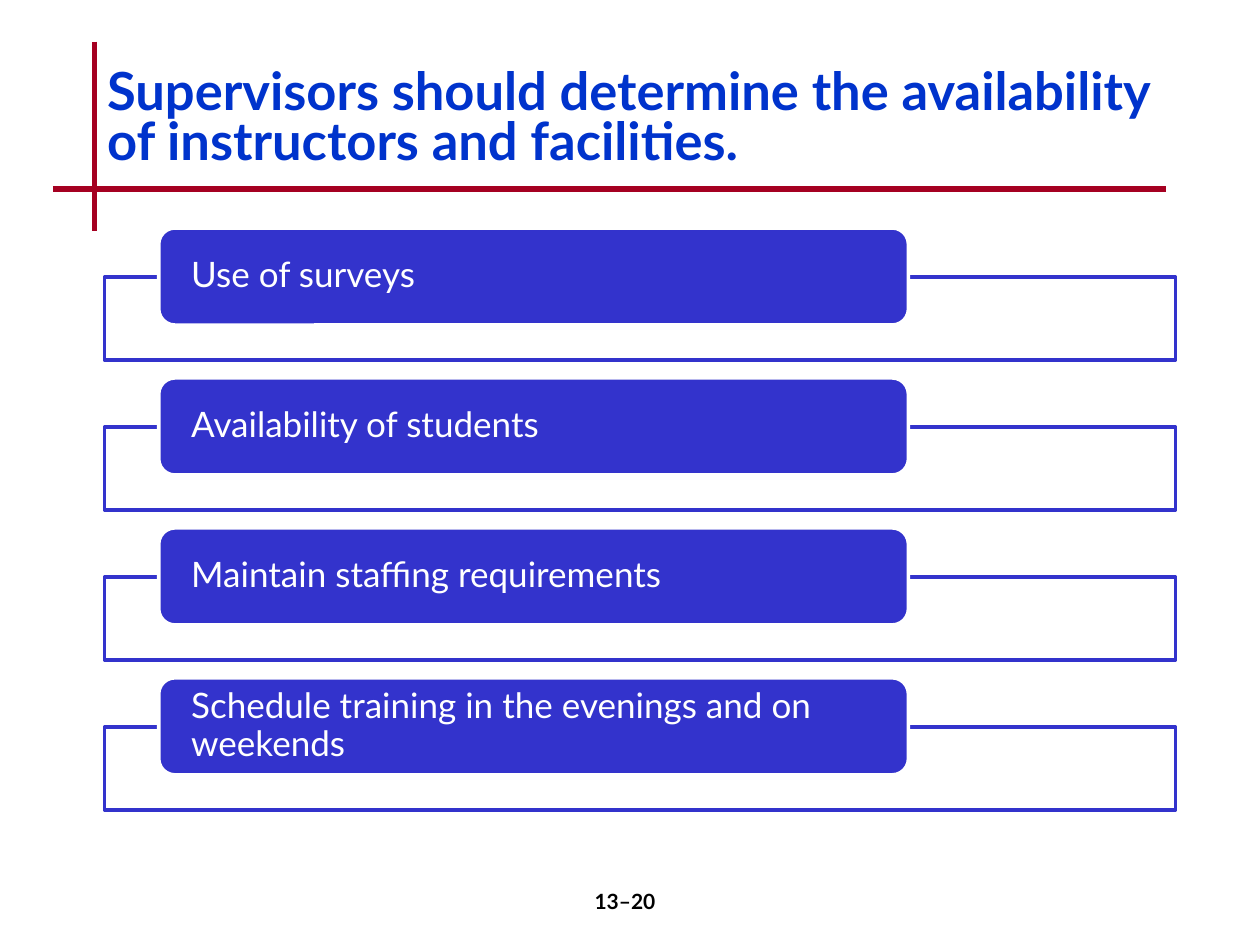
from lxml import etree
from pptx import Presentation
from pptx.dml.color import RGBColor
from pptx.enum import shapes, text
from pptx.oxml.ns import qn
from pptx.util import Inches, Pt

FONT = "Lato"
RED = RGBColor(0xA5, 0x00, 0x21)
TITLE_BLUE = RGBColor(0x00, 0x33, 0xCC)
BOX_BLUE = RGBColor(0x33, 0x33, 0xCC)
WHITE = RGBColor(0xFF, 0xFF, 0xFF)
BLACK = RGBColor(0x00, 0x00, 0x00)

TOPICS = [
    "Use of surveys",
    "Availability of students",
    "Maintain staffing requirements",
    "Schedule training in the evenings and on weekends",
]
FIRST_TOP = 1.81
ROW_PITCH = 1.19


def set_font(para, size, color, bold=False):
    para.font.name = FONT
    para.font.size = Pt(size)
    para.font.color.rgb = color
    para.font.bold = bold


def add_title(slide, wording):
    title = slide.shapes.title
    title.left, title.top = Inches(0.75), Inches(0.33)
    title.width, title.height = Inches(8.5), Inches(1.25)
    frame = title.text_frame
    frame.text = wording
    frame.auto_size = text.MSO_AUTO_SIZE.NONE
    frame.vertical_anchor = text.MSO_ANCHOR.MIDDLE
    para = frame.paragraphs[0]
    para.alignment = text.PP_ALIGN.LEFT
    para.line_spacing = 0.8
    set_font(para, 30, TITLE_BLUE, bold=True)


def add_rule(slide, x1, y1, x2, y2):
    rule = slide.shapes.add_connector(
        shapes.MSO_CONNECTOR.STRAIGHT, Inches(x1), Inches(y1), Inches(x2), Inches(y2))
    rule.line.color.rgb = RED
    rule.line.width = Pt(3)
    etree.SubElement(rule._element.spPr, qn("a:effectLst"))


def add_box(slide, preset, left, top, width, height, fill, line):
    box = slide.shapes.add_shape(
        preset, Inches(left), Inches(top), Inches(width), Inches(height))
    box.shadow.inherit = False
    box.fill.solid()
    box.fill.fore_color.rgb = fill
    box.line.color.rgb = line
    box.line.width = Pt(2)
    return box


def add_topic(slide, top, wording):
    """Add an outlined frame with a labelled rounded box over its top edge."""
    add_box(slide, shapes.MSO_SHAPE.RECTANGLE,
            0.83, top + 0.39, 8.5, 0.66, WHITE, BOX_BLUE)
    label = add_box(slide, shapes.MSO_SHAPE.ROUNDED_RECTANGLE,
                    1.26, top, 5.95, 0.77, BOX_BLUE, WHITE)
    frame = label.text_frame
    frame.text = wording
    frame.word_wrap = True
    frame.vertical_anchor = text.MSO_ANCHOR.MIDDLE
    frame.margin_left = frame.margin_right = Inches(0.22)
    frame.margin_top = frame.margin_bottom = 0
    para = frame.paragraphs[0]
    para.alignment = text.PP_ALIGN.LEFT
    para.line_spacing = 0.9
    para.space_after = Pt(7)
    set_font(para, 20, WHITE)


def add_page_number(slide, wording):
    box = slide.shapes.add_textbox(Inches(3.92), Inches(7), Inches(2.08), Inches(0.5))
    box.text_frame.word_wrap = True
    para = box.text_frame.paragraphs[0]
    para.text = wording
    para.alignment = text.PP_ALIGN.CENTER
    set_font(para, 12, BLACK, bold=True)


def main():
    deck = Presentation()
    deck.slide_width, deck.slide_height = Inches(10), Inches(7.5)
    slide = deck.slides.add_slide(deck.slide_layouts.get_by_name("Title Only"))
    add_rule(slide, 0.75, 0.33, 0.75, 1.83)
    add_rule(slide, 0.42, 1.5, 9.25, 1.5)
    for row, topic in enumerate(TOPICS):
        add_topic(slide, FIRST_TOP + row * ROW_PITCH, topic)
    add_title(slide, "Supervisors should determine the availability "
                     "of instructors and facilities.")
    add_page_number(slide, "13–20")
    deck.save("out.pptx")


if __name__ == "__main__":
    main()
